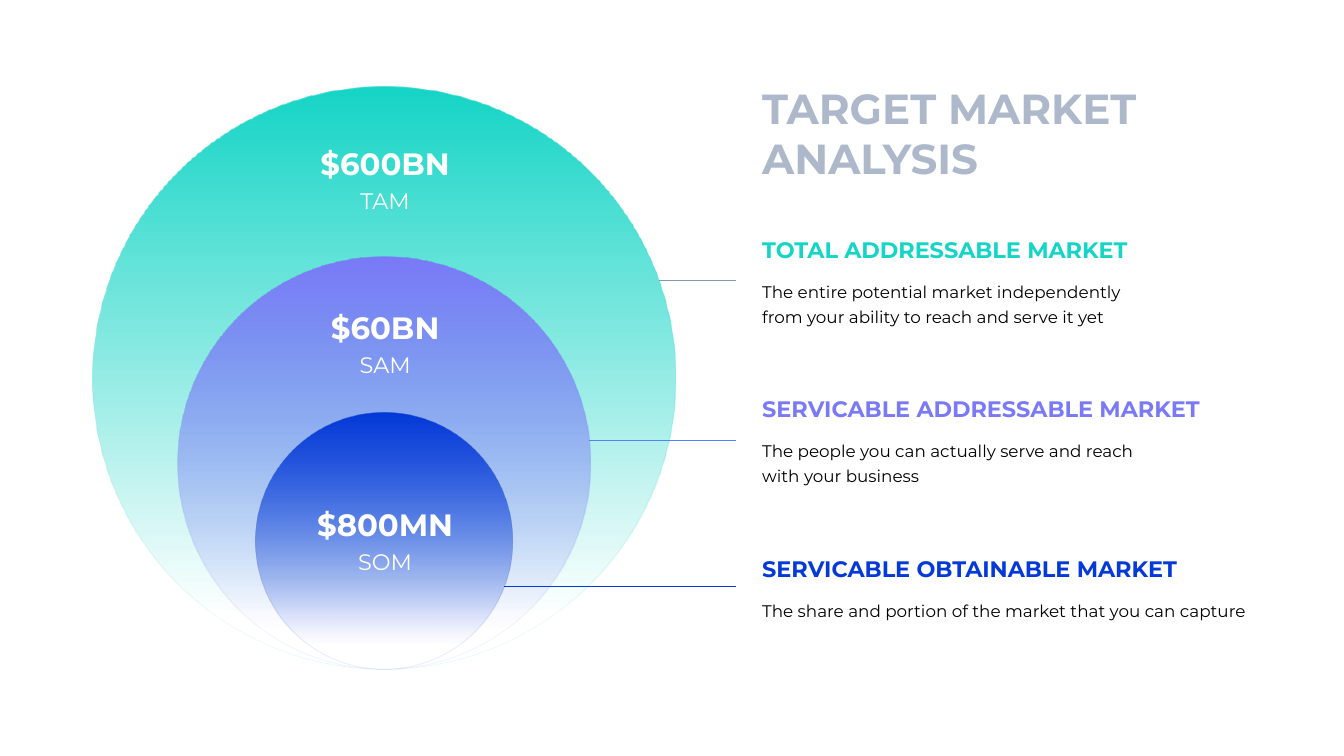
from dataclasses import dataclass
from math import sqrt

from lxml.etree import SubElement
from pptx import Presentation
from pptx.dml.color import RGBColor
from pptx.enum.shapes import MSO_CONNECTOR, MSO_SHAPE
from pptx.enum.text import MSO_ANCHOR, PP_ALIGN
from pptx.oxml.ns import qn
from pptx.util import Inches, Pt


@dataclass(frozen=True)
class Theme:
    font: str = "Montserrat"
    title: str = "ADB9CA"
    body: str = "000000"
    label: str = "FFFFFF"
    title_size: int = 30
    amount_size: int = 22
    heading_size: int = 16
    body_size: int = 12


@dataclass(frozen=True)
class Market:
    amount: str
    short_name: str
    heading: str
    description: str
    color: str
    line_color: str
    diameter: float
    label_top: float
    heading_top: float
    description_width: float
    line_y: float


THEME = Theme()

# The circles share a vertical axis and touch at the bottom
CENTER_X, BOTTOM = 3.81, 6.64
TEXT_LEFT, LINE_RIGHT = 7.56, 7.3

MARKETS = [
    Market("$600BN", "TAM", "TOTAL ADDRESSABLE MARKET",
           "The entire potential market independently from your ability to reach and serve it yet",
           "15D5C6", "8497B0", 5.78, 1.32, 2.34, 3.57, 2.78),
    Market("$60BN", "SAM", "SERVICABLE ADDRESSABLE MARKET",
           "The people you can actually serve and reach with your business",
           "7A7AF7", "567FFB", 4.09, 2.95, 3.92, 4.03, 4.37),
    Market("$800MN", "SOM", "SERVICABLE OBTAINABLE MARKET",
           "The share and portion of the market that you can capture",
           "053AD8", "053AD8", 2.55, 4.91, 5.51, 4.85, 5.82),
]


def set_alpha(color_element, percent):
    SubElement(color_element, qn("a:alpha"), val=str(percent * 1000))


def style_paragraph(paragraph, text, size, color, bold=False):
    paragraph.text = text
    font = paragraph.font
    font.name, font.size, font.bold = THEME.font, Pt(size), bold
    font.color.rgb = RGBColor.from_string(color)


def add_text_frame(slide, left, top, width, height, anchor=MSO_ANCHOR.TOP,
                   wrap=True, margins=(0, 0, 0, 0)):
    box = slide.shapes.add_textbox(Inches(left), Inches(top), Inches(width), Inches(height))
    frame = box.text_frame
    frame.word_wrap = wrap
    frame.vertical_anchor = anchor
    (frame.margin_left, frame.margin_top,
     frame.margin_right, frame.margin_bottom) = map(Inches, margins)
    return frame


def add_title(slide, text):
    frame = add_text_frame(slide, TEXT_LEFT, 0.77, 4.68, 1.11, margins=(0, 0.05, 0.1, 0.05))
    style_paragraph(frame.paragraphs[0], text, THEME.title_size, THEME.title, bold=True)


def add_circle(slide, market):
    diameter = market.diameter
    circle = slide.shapes.add_shape(
        MSO_SHAPE.OVAL, Inches(CENTER_X - diameter / 2), Inches(BOTTOM - diameter),
        Inches(diameter), Inches(diameter))
    circle.shadow.inherit = False
    color = RGBColor.from_string(market.color)

    # Fade from solid at the top to clear near the bottom
    circle.fill.gradient()
    circle.fill.gradient_angle = 270
    for stop, position in zip(circle.fill.gradient_stops, (0, 0.9)):
        stop.color.rgb = color
        stop.position = position
    set_alpha(circle.element.xpath(".//a:gs/a:srgbClr")[-1], 0)

    circle.line.color.rgb = color
    circle.line.width = Pt(0.5)
    set_alpha(circle.element.xpath(".//a:ln//a:srgbClr")[0], 10)


def add_circle_label(slide, market):
    width = 1.8
    frame = add_text_frame(slide, CENTER_X + 0.01 - width / 2, market.label_top, width, 0.91,
                           MSO_ANCHOR.MIDDLE, wrap=False, margins=(0.1, 0.05, 0.1, 0.05))
    amount, short_name = frame.paragraphs[0], frame.add_paragraph()
    style_paragraph(amount, market.amount, THEME.amount_size, THEME.label, bold=True)
    style_paragraph(short_name, market.short_name, THEME.heading_size, THEME.label)
    for paragraph in frame.paragraphs:
        paragraph.alignment = PP_ALIGN.CENTER
        paragraph.space_after = Pt(4)


def add_description(slide, market):
    heading = add_text_frame(slide, TEXT_LEFT, market.heading_top, 4.42, 0.27,
                             MSO_ANCHOR.MIDDLE).paragraphs[0]
    style_paragraph(heading, market.heading, THEME.heading_size, market.color, bold=True)
    description = add_text_frame(slide, TEXT_LEFT, market.heading_top + 0.4,
                                 market.description_width, 0.48).paragraphs[0]
    style_paragraph(description, market.description, THEME.body_size, THEME.body)
    description.line_spacing = Pt(18)


def add_leader_line(slide, market):
    # The line stops where its height crosses the circle's edge
    radius = market.diameter / 2
    offset = market.line_y - (BOTTOM - radius)
    edge_x = CENTER_X + sqrt(radius ** 2 - offset ** 2)
    line = slide.shapes.add_connector(
        MSO_CONNECTOR.STRAIGHT, Inches(LINE_RIGHT), Inches(market.line_y),
        Inches(edge_x), Inches(market.line_y))
    line.line.color.rgb = RGBColor.from_string(market.line_color)
    line.line.width = Pt(0.5)
    SubElement(line.element.spPr, qn("a:effectLst"))


def main():
    presentation = Presentation()
    presentation.slide_width, presentation.slide_height = Inches(13.33), Inches(7.5)
    slide = presentation.slides.add_slide(presentation.slide_layouts[6])

    add_title(slide, "TARGET MARKET ANALYSIS")
    # Each layer is finished before the next, so labels stay above all circles
    for add_part in (add_circle, add_circle_label, add_description, add_leader_line):
        for market in MARKETS:
            add_part(slide, market)

    presentation.save("out.pptx")


if __name__ == "__main__":
    main()
